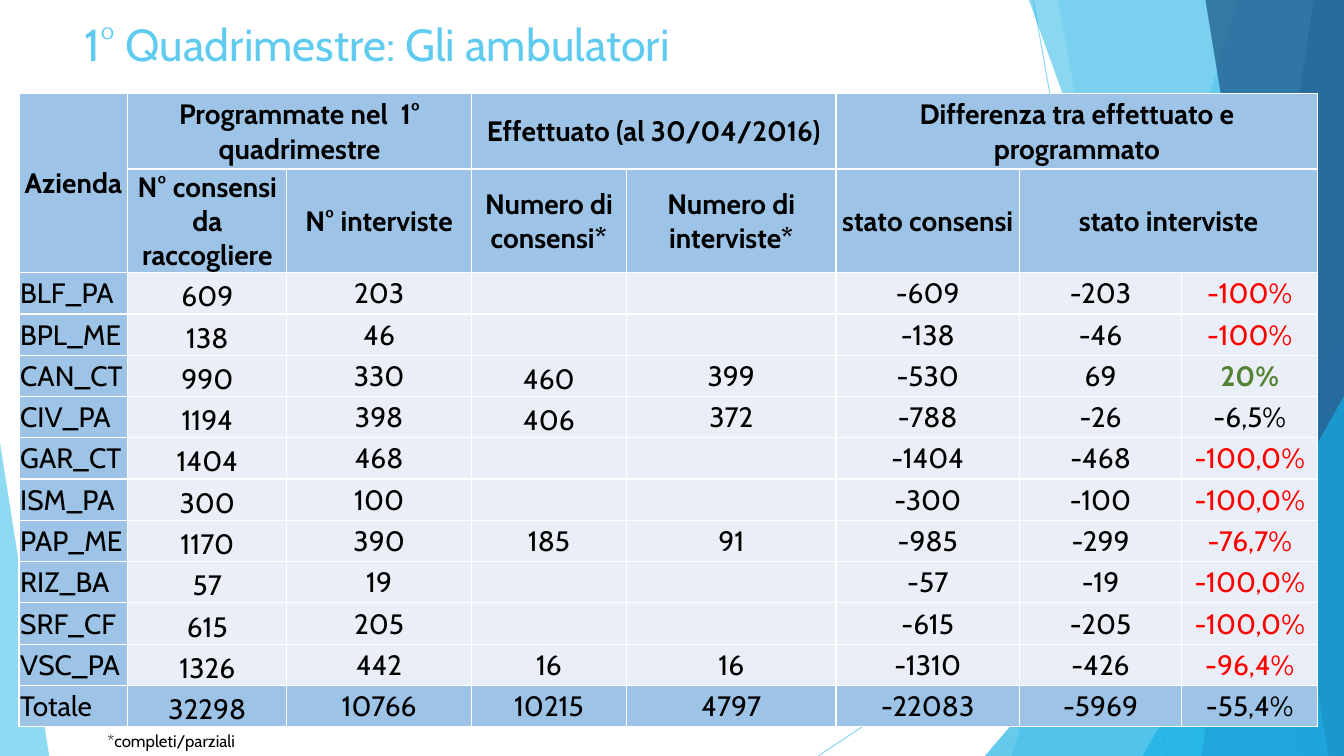
from lxml import etree
from pptx import Presentation
from pptx import util as u
from pptx.dml import color
from pptx.enum import shapes, text
from pptx.oxml import ns

Cm = u.Cm
FONT = "Cabin"
COLOURS = {
    "sky": "5FCBEF", "cyan": "17B0E4", "blue": "2E83C3", "navy": "236292",
    "header": "9DC3E6", "body": "EAEFF7", "black": "000000", "white": "FFFFFF",
    "loss": "FF0000", "gain": "548235",
}
CENTRE = text.PP_ALIGN.CENTER
MIDDLE = text.MSO_ANCHOR.MIDDLE
BOTTOM = text.MSO_ANCHOR.BOTTOM

COLUMN_WIDTHS = [2.74, 4.01, 4.65, 3.91, 5.28, 4.62, 4.09, 3.43]
HEADER_HEIGHTS = [1.9, 2.39]
BODY_HEIGHT = 1.04
HEADERS = [
    (0, 0, 2, 1, "Azienda"),
    (0, 1, 1, 2, "Programmate nel  1° quadrimestre"),
    (0, 3, 1, 2, "Effettuato (al 30/04/2016)"),
    (0, 5, 1, 3, "Differenza tra effettuato e programmato"),
    (1, 1, 1, 1, "N° consensi da raccogliere"),
    (1, 2, 1, 1, "N° interviste"),
    (1, 3, 1, 1, "Numero di consensi*"),
    (1, 4, 1, 1, "Numero di interviste*"),
    (1, 5, 1, 1, "stato consensi"),
    (1, 6, 1, 2, "stato interviste"),
]
CLINICS = [
    ("BLF_PA", "609", "203", "", "", "-609", "-203", "-100%"),
    ("BPL_ME", "138", "46", "", "", "-138", "-46", "-100%"),
    ("CAN_CT", "990", "330", "460", "399", "-530", "69", "20%"),
    ("CIV_PA", "1194", "398", "406", "372", "-788", "-26", "-6,5%"),
    ("GAR_CT", "1404", "468", "", "", "-1404", "-468", "-100,0%"),
    ("ISM_PA", "300", "100", "", "", "-300", "-100", "-100,0%"),
    ("PAP_ME", "1170", "390", "185", "91", "-985", "-299", "-76,7%"),
    ("RIZ_BA", "57", "19", "", "", "-57", "-19", "-100,0%"),
    ("SRF_CF", "615", "205", "", "", "-615", "-205", "-100,0%"),
    ("VSC_PA", "1326", "442", "16", "16", "-1310", "-426", "-96,4%"),
    ("Totale", "32298", "10766", "10215", "4797", "-22083", "-5969", "-55,4%"),
]


def rgb(name):
    """Return the named colour."""
    return color.RGBColor.from_string(COLOURS[name])


def write(frame, words, size=20, colour="black", bold=False, align=None):
    """Write one formatted paragraph into a text frame."""
    paragraph = frame.paragraphs[0]
    paragraph.alignment = align
    paragraph.font.size = u.Pt(size)
    if words:
        run = paragraph.add_run()
        run.text = words
        run.font.name = FONT
        run.font.size = u.Pt(size)
        run.font.bold = bold
        run.font.color.rgb = rgb(colour)


def set_opacity(part, percent):
    """Make the solid colour inside a shape partly transparent."""
    solid = part.element.spPr.find(".//" + ns.qn("a:srgbClr"))
    etree.SubElement(solid, ns.qn("a:alpha"), val=str(percent * 1000))


def draw_backdrop(slide, left, top, width, height):
    """Draw the translucent facets and thin lines along the slide edges."""
    def place(x, y):
        return Cm(left + x), Cm(top + y)

    for start, end in [((26.04, 0), (29.41, height)), ((width, 10.24), (20.62, height))]:
        ray = slide.shapes.add_connector(
            shapes.MSO_CONNECTOR.STRAIGHT, *place(*start), *place(*end))
        ray.line.color.rgb = rgb("sky")
        ray.line.width = u.Pt(0.75)
        set_opacity(ray, 70)
        etree.SubElement(ray.element.spPr, ns.qn("a:effectLst"))

    def band(top_x, bottom_x):
        return [(top_x, 0), (width, 0), (width, height), (bottom_x, height)]

    def corner(bottom_x, right_y):
        return [(bottom_x, height), (width, right_y), (width, height)]

    facets = [
        (band(31.19, 25.5), "sky", 36),
        (band(26.67, 30.05), "sky", 20),
        (corner(24.82, 8.46), "cyan", 66),
        (band(25.93, 32.79), "cyan", 50),
        (band(33.1, 30.28), "blue", 70),
        (band(30.38, 33.48), "navy", 80),
        (corner(28.8, 9.98), "cyan", 66),
        ([(0, height), (0, 11.15), (1.24, height)], "sky", 70),
    ]
    for points, colour, opacity in facets:
        outline = slide.shapes.build_freeform(*place(*points[0]))
        outline.add_line_segments([place(*point) for point in points[1:]], close=True)
        facet = outline.convert_to_shape()
        facet.shadow.inherit = False
        facet.fill.solid()
        facet.fill.fore_color.rgb = rgb(colour)
        facet.line.fill.background()
        set_opacity(facet, opacity)


def place_title(slide, left, top, width, height):
    """Move the title placeholder into its box, above the backdrop."""
    title = slide.shapes.title
    title.element.getparent().append(title.element)
    title.left, title.top, title.width, title.height = map(Cm, (left, top, width, height))
    title.text_frame.auto_size = text.MSO_AUTO_SIZE.NONE
    title.text_frame.vertical_anchor = text.MSO_ANCHOR.TOP
    write(title.text_frame, "1° Quadrimestre: Gli ambulatori",
          size=32, colour="sky", align=text.PP_ALIGN.LEFT)


def style_cell(cell, fill, anchor=MIDDLE):
    """Set the fill, margins, anchor and white borders of a cell."""
    cell.fill.solid()
    cell.fill.fore_color.rgb = rgb(fill)
    cell.vertical_anchor = anchor
    cell.margin_left = cell.margin_right = cell.margin_top = Cm(0.03)
    cell.margin_bottom = 0
    properties = cell._tc.get_or_add_tcPr()
    for index, side in enumerate(("lnL", "lnR", "lnT", "lnB")):
        border = etree.Element(ns.qn("a:" + side), w=str(u.Pt(1)))
        solid = etree.SubElement(border, ns.qn("a:solidFill"))
        etree.SubElement(solid, ns.qn("a:srgbClr"), val=COLOURS["white"])
        properties.insert(index, border)


def percent_format(words):
    """Choose the format of a percentage from its value."""
    value = float(words.rstrip("%").replace(",", "."))
    if value > 0:
        return {"colour": "gain", "bold": True}
    return {"colour": "loss" if value < -50 else "black"}


def draw_results(slide, left, top):
    """Draw the table of planned and completed interviews."""
    heights = HEADER_HEIGHTS + [BODY_HEIGHT] * len(CLINICS)
    results = slide.shapes.add_table(
        len(heights), len(COLUMN_WIDTHS), Cm(left), Cm(top),
        Cm(sum(COLUMN_WIDTHS)), Cm(sum(heights))).table
    results.first_row = results.horz_banding = False
    for column, width in zip(results.columns, COLUMN_WIDTHS):
        column.width = Cm(width)
    for row, height in zip(results.rows, heights):
        row.height = Cm(height)

    for row in range(len(HEADER_HEIGHTS)):
        for column in range(len(COLUMN_WIDTHS)):
            style_cell(results.cell(row, column), "header")
    for row, column, down, across, words in HEADERS:
        heading = results.cell(row, column)
        if down * across > 1:
            heading.merge(results.cell(row + down - 1, column + across - 1))
        write(heading.text_frame, words, bold=True, align=CENTRE)

    for row, clinic in enumerate(CLINICS, len(HEADER_HEIGHTS)):
        total = clinic[0] == "Totale"
        for column, words in enumerate(clinic):
            cell = results.cell(row, column)
            low = column == 1 or words in ("460", "406")
            style_cell(cell, "header" if total or column == 0 else "body",
                       BOTTOM if low else MIDDLE)
            look = percent_format(words) if column == 7 and not total else {}
            write(cell.text_frame, words, align=CENTRE if column else None, **look)


def draw_footnote(slide, left, top, width, height):
    """Write the footnote below the table."""
    note = slide.shapes.add_textbox(*map(Cm, (left, top, width, height)))
    note.text_frame.word_wrap = False
    note.text_frame.auto_size = text.MSO_AUTO_SIZE.SHAPE_TO_FIT_TEXT
    write(note.text_frame, "*completi/parziali", size=12)


def main():
    """Build and save the slide."""
    deck = Presentation()
    deck.slide_width, deck.slide_height = Cm(33.87), Cm(19.05)
    slide = deck.slides.add_slide(deck.slide_layouts[5])
    draw_backdrop(slide, 0, 0, 33.87, 19.05)
    place_title(slide, 1.88, 0.3, 23.88, 1.5)
    draw_results(slide, 0.48, 2.36)
    draw_footnote(slide, 2.46, 18.29, 3.99, 0.76)
    deck.save("out.pptx")


if __name__ == "__main__":
    main()
